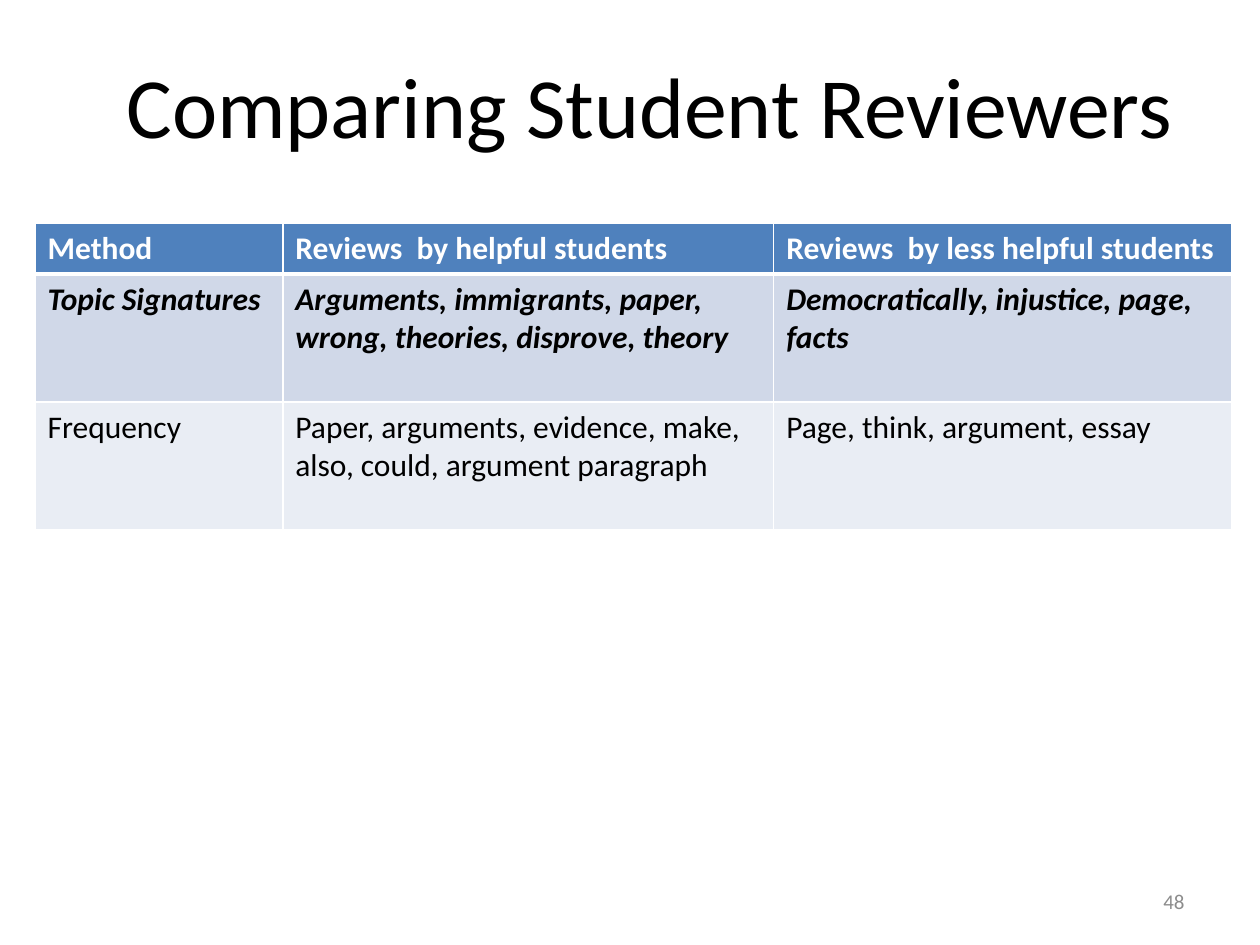
from lxml import etree
from pptx import Presentation
from pptx import util as u
from pptx.dml.color import RGBColor
from pptx.enum import text
from pptx.oxml import ns

HUES = {"ink": "000000", "white": "FFFFFF", "head": "4F81BD",
        "dark": "D0D8E8", "light": "E9EDF4", "grey": "8C8C8C"}


class Deck:
    """Hold the style and the current slide."""

    def __init__(self, wide, high):
        self.prs = Presentation()
        self.prs.slide_width, self.prs.slide_height = u.Pt(wide), u.Pt(high)
        self.slide = self.prs.slides.add_slide(self.prs.slide_layouts[6])

    def put(self, frame, words, align, hue, **form):
        para = frame.paragraphs[0]
        para.alignment = align
        run = para.add_run()
        run.text = words
        form = {"name": "Calibri", "size": u.Pt(18), **form}
        for key, val in form.items():
            setattr(run.font, key, val)
        run.font.color.rgb = RGBColor.from_string(HUES[hue])

    def label(self, box, words, align, hue, size):
        frame = self.slide.shapes.add_textbox(*map(u.Pt, box)).text_frame
        frame.word_wrap = True
        frame.vertical_anchor = text.MSO_ANCHOR.MIDDLE
        self.put(frame, words, align, hue, size=u.Pt(size))

    def edge(self, cell, side, width):
        props = cell._tc.get_or_add_tcPr()
        line = etree.SubElement(props, ns.qn(f"a:ln{side}"), w=str(u.Pt(width)))
        fill = etree.SubElement(line, ns.qn("a:solidFill"))
        etree.SubElement(fill, ns.qn("a:srgbClr"), val=HUES["white"])

    def table(self, left, top, cols, highs, rows, looks):
        box = map(u.Pt, (left, top, sum(cols), sum(highs)))
        grid = self.slide.shapes.add_table(len(rows), len(cols), *box).table
        for col, wide in zip(grid.columns, cols):
            col.width = u.Pt(wide)
        for i, (row, high) in enumerate(zip(grid.rows, highs)):
            row.height = u.Pt(high)
            back, hue, form = looks[i]
            for cell, words in zip(row.cells, rows[i]):
                for side in "LRTB":
                    thick = (i, side) in ((0, "B"), (1, "T"))
                    self.edge(cell, side, 3 if thick else 1)
                cell.fill.solid()
                cell.fill.fore_color.rgb = RGBColor.from_string(HUES[back])
                self.put(cell.text_frame, words, text.PP_ALIGN.LEFT, hue, **form)


def main():
    deck = Deck(720, 540)
    deck.label((38, 14.4, 666, 90), "Comparing Student Reviewers",
               text.PP_ALIGN.CENTER, "ink", 49)
    rows = [
        ("Method", "Reviews  by helpful students",
         "Reviews  by less helpful students"),
        ("Topic Signatures",
         "Arguments, immigrants, paper, wrong, theories, disprove, theory",
         "Democratically, injustice, page, facts"),
        ("Frequency",
         "Paper, arguments, evidence, make, also, could, argument paragraph",
         "Page, think, argument, essay"),
    ]
    looks = [("head", "white", {"bold": True}),
             ("dark", "ink", {"bold": True, "italic": True}),
             ("light", "ink", {"bold": False, "italic": False})]
    deck.table(20, 127.5, (141.6, 280.5, 262), (29, 73.2, 73.2), rows, looks)
    deck.label((516, 500.5, 168, 28.75), "48", text.PP_ALIGN.RIGHT, "grey", 12)
    deck.prs.save("out.pptx")


if __name__ == "__main__":
    main()
